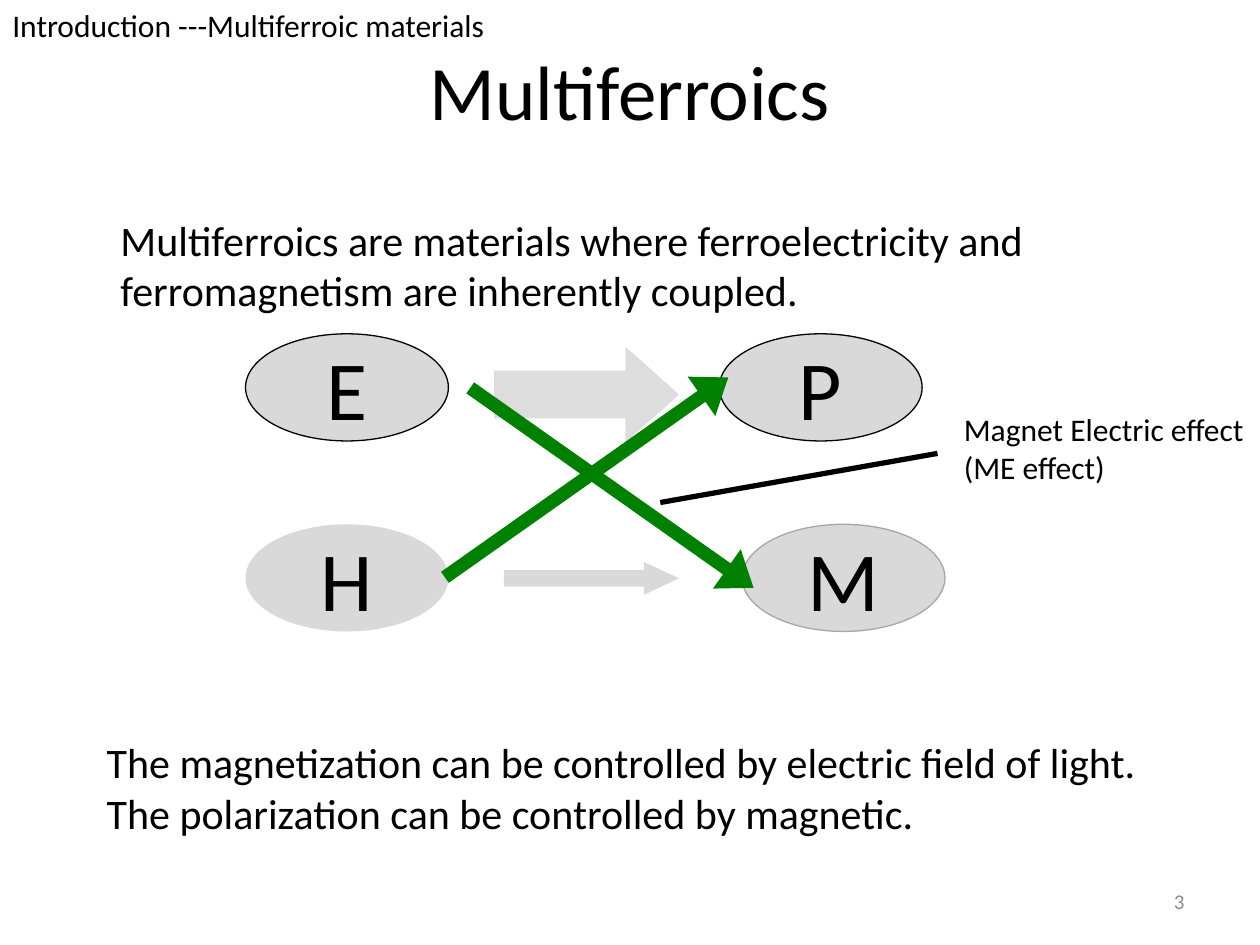
from dataclasses import dataclass
from typing import Optional

from lxml.etree import SubElement
from pptx import Presentation
from pptx.dml.color import RGBColor
from pptx.enum.shapes import MSO_CONNECTOR, MSO_SHAPE
from pptx.enum.text import MSO_ANCHOR, PP_ALIGN
from pptx.oxml.ns import qn
from pptx.util import Cm, Pt


@dataclass(frozen=True)
class Theme:
    font: str = "Calibri"
    ink: str = "000000"
    muted: str = "8C8C8C"
    node: str = "D9D9D9"
    strong_arrow: str = "DDDDDD"
    soft_outline: str = "A6A6A6"
    cross_effect: str = "008000"
    title: int = 44
    symbol: int = 48
    body: int = 24
    label: int = 18
    page: int = 12
    outline: float = 0.75
    leader: float = 3


THEME = Theme()


@dataclass(frozen=True)
class Box:
    """Position and size in centimetres."""
    left: float
    top: float
    width: float
    height: float

    def lengths(self) -> tuple:
        return Cm(self.left), Cm(self.top), Cm(self.width), Cm(self.height)


@dataclass(frozen=True)
class Caption:
    text: str
    box: Box
    size: int
    color: str = THEME.ink
    align: PP_ALIGN = PP_ALIGN.LEFT
    anchor: MSO_ANCHOR = MSO_ANCHOR.TOP
    wrap: bool = True


@dataclass(frozen=True)
class Quantity:
    symbol: str
    left: float
    top: float
    outline: Optional[str]


@dataclass(frozen=True)
class Effect:
    box: Box
    shaft: float
    head: float
    color: str
    rotation: float = 0


OVAL_WIDTH, OVAL_HEIGHT = 4.09, 2.16
FIELD_LEFT = 4.95
ELECTRIC_TOP, MAGNETIC_TOP = 6.73, 10.57
CROSS_WIDTH, CROSS_HEIGHT, CROSS_TILT = 6.99, 0.97, 35.2

QUANTITIES = [
    Quantity("E", FIELD_LEFT, ELECTRIC_TOP, THEME.ink),
    Quantity("H", FIELD_LEFT, MAGNETIC_TOP, None),
    Quantity("P", 14.5, ELECTRIC_TOP, THEME.ink),
    Quantity("M", 14.96, MAGNETIC_TOP, THEME.soft_outline),
]
DIRECT_EFFECTS = [
    Effect(Box(10.16, 11.33, 3.53, 0.66), 0.5, 1.07, THEME.node),
    Effect(Box(9.96, 6.99, 3.73, 1.93), 0.5, 0.56, THEME.strong_arrow),
]
CROSS_EFFECTS = [
    Effect(Box(left, top, CROSS_WIDTH, CROSS_HEIGHT), 0.28, 0.68,
           THEME.cross_effect, tilt)
    for left, top, tilt in ((8.33, 9.14, -CROSS_TILT), (8.84, 9.35, CROSS_TILT))
]
TITLE = Caption("Multiferroics", Box(1.27, 0.76, 22.86, 3.18), THEME.title,
                align=PP_ALIGN.CENTER)
STATEMENTS = [
    Caption("Multiferroics are materials where ferroelectricity and\n"
            "ferromagnetism are inherently coupled.",
            Box(2.18, 4.19, 19.08, 2.31), THEME.body, wrap=False),
    Caption("The magnetization can be controlled by electric field of light.\n"
            "The polarization can be controlled by magnetic.",
            Box(1.9, 14.73, 22.02, 2.31), THEME.body),
    Caption("Introduction ---Multiferroic materials",
            Box(0, 0, 10.13, 1.02), THEME.label, wrap=False),
    Caption("3", Box(18.21, 17.65, 5.92, 1.02), THEME.page, THEME.muted,
            PP_ALIGN.RIGHT, MSO_ANCHOR.MIDDLE),
]
EFFECT_NAME = Caption("Magnet Electric effect\n(ME effect)",
                      Box(19.18, 8.15, 6.22, 1.8), THEME.label, wrap=False)


def write_text(frame, text: str, size: int, color: str, align: PP_ALIGN,
               anchor: MSO_ANCHOR, wrap: bool) -> None:
    frame.text = text
    frame.word_wrap = wrap
    frame.vertical_anchor = anchor
    for paragraph in frame.paragraphs:
        paragraph.alignment = align
        for run in paragraph.runs:
            run.font.name = THEME.font
            run.font.size = Pt(size)
            run.font.color.rgb = RGBColor.from_string(color)


def add_caption(slide, caption: Caption) -> None:
    textbox = slide.shapes.add_textbox(*caption.box.lengths())
    write_text(textbox.text_frame, caption.text, caption.size, caption.color,
               caption.align, caption.anchor, caption.wrap)


def add_filled(slide, preset: MSO_SHAPE, box: Box, fill: str,
               outline: Optional[str] = None):
    shape = slide.shapes.add_shape(preset, *box.lengths())
    shape.shadow.inherit = False
    shape.fill.solid()
    shape.fill.fore_color.rgb = RGBColor.from_string(fill)
    if outline:
        shape.line.color.rgb = RGBColor.from_string(outline)
        shape.line.width = Pt(THEME.outline)
    else:
        shape.line.fill.background()
    return shape


def add_quantity(slide, quantity: Quantity) -> None:
    box = Box(quantity.left, quantity.top, OVAL_WIDTH, OVAL_HEIGHT)
    oval = add_filled(slide, MSO_SHAPE.OVAL, box, THEME.node, quantity.outline)
    write_text(oval.text_frame, quantity.symbol, THEME.symbol, THEME.ink,
               PP_ALIGN.CENTER, MSO_ANCHOR.MIDDLE, False)


def add_effect(slide, effect: Effect) -> None:
    arrow = add_filled(slide, MSO_SHAPE.RIGHT_ARROW, effect.box, effect.color)
    arrow.adjustments[0] = effect.shaft
    arrow.adjustments[1] = effect.head
    arrow.rotation = effect.rotation


def add_leader(slide) -> None:
    """Link the crossing arrows to the name of their effect."""
    leader = slide.shapes.add_connector(
        MSO_CONNECTOR.STRAIGHT, Cm(18.9), Cm(9.14), Cm(13.31), Cm(10.13))
    leader.line.color.rgb = RGBColor.from_string(THEME.ink)
    leader.line.width = Pt(THEME.leader)
    SubElement(leader._element.spPr, qn("a:effectLst"))


def main() -> None:
    presentation = Presentation()
    presentation.slide_width = Cm(25.4)
    presentation.slide_height = Cm(19.05)
    slide = presentation.slides.add_slide(presentation.slide_layouts[6])

    add_caption(slide, TITLE)
    for quantity in QUANTITIES:
        add_quantity(slide, quantity)
    for effect in DIRECT_EFFECTS:
        add_effect(slide, effect)
    for statement in STATEMENTS:
        add_caption(slide, statement)
    for effect in CROSS_EFFECTS:
        add_effect(slide, effect)
    add_leader(slide)
    add_caption(slide, EFFECT_NAME)

    presentation.save("out.pptx")


if __name__ == "__main__":
    main()
